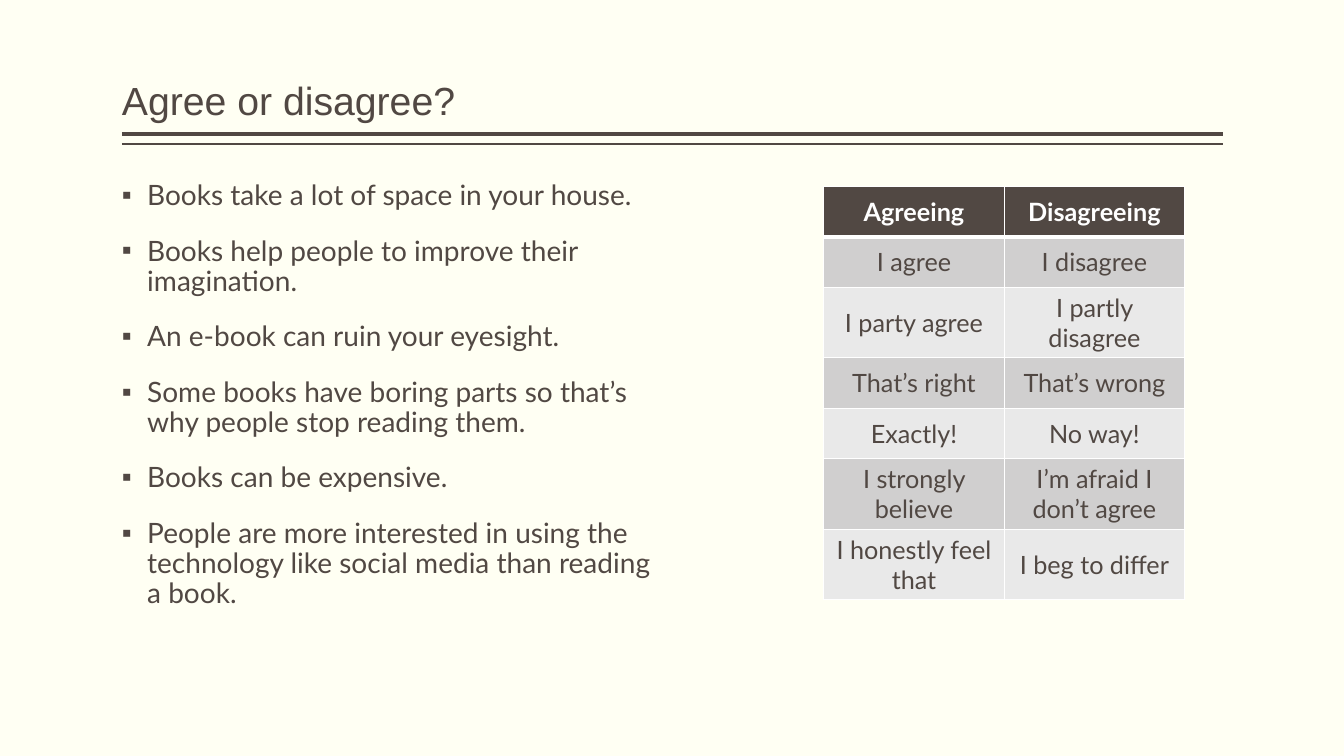
import pptx
import pptx.dml.color
import pptx.enum.text
import pptx.oxml
import pptx.oxml.ns
import pptx.util
from lxml import etree

SLIDE_WIDTH, SLIDE_HEIGHT = 13.33, 7.5
MARGIN = 1.21
CONTENT_WIDTH = SLIDE_WIDTH - 2 * MARGIN + 0.01
COLORS = {
    "background": "FFFFF3",
    "ink": "514843",
    "white": "FFFFFF",
    "odd_row": "D0CFCF",
    "even_row": "E9E9E9",
}
STATEMENTS = [
    "Books take a lot of space in your house.",
    "Books help people to improve their imagination.",
    "An e-book can ruin your eyesight.",
    "Some books have boring parts so that’s why people stop reading them.",
    "Books can be expensive.",
    "People are more interested in using the technology like social media than reading a book.",
]
PHRASES = [
    ("Agreeing", "Disagreeing"),
    ("I agree", "I disagree"),
    ("I party agree", "I partly disagree"),
    ("That’s right", "That’s wrong"),
    ("Exactly!", "No way!"),
    ("I strongly believe", "I’m afraid I don’t agree"),
    ("I honestly feel that", "I beg to differ"),
]


def inches(*lengths):
    return [pptx.util.Inches(length) for length in lengths]


def color(name):
    return pptx.dml.color.RGBColor.from_string(COLORS[name])


def style_font(paragraph, name, size, color_name, bold=False):
    font = paragraph.font
    font.name, font.size, font.bold = name, pptx.util.Pt(size), bold
    font.color.rgb = color(color_name)


def place_placeholder(shape, left, top, width, height, anchor):
    shape.left, shape.top, shape.width, shape.height = inches(left, top, width, height)
    frame = shape.text_frame
    frame.word_wrap = True
    frame.auto_size = pptx.enum.text.MSO_AUTO_SIZE.NONE
    frame.vertical_anchor = anchor
    frame.margin_left = frame.margin_right = 0
    frame.margin_top = frame.margin_bottom = pptx.util.Inches(0.05)
    return frame


def add_rule(slide, top, weight):
    line = slide.shapes.add_connector(
        pptx.enum.shapes.MSO_CONNECTOR.STRAIGHT,
        *inches(MARGIN, top, MARGIN + CONTENT_WIDTH, top))
    line.line.color.rgb = color("ink")
    line.line.width = pptx.util.Pt(weight)
    etree.SubElement(line._element.spPr, pptx.oxml.ns.qn("a:effectLst"))


def add_bullet(paragraph, indent):
    properties = paragraph._p.get_or_add_pPr()
    properties.set("marL", str(pptx.util.Inches(indent)))
    properties.set("indent", str(-pptx.util.Inches(indent)))
    bullet_font = etree.SubElement(properties, pptx.oxml.ns.qn("a:buFont"))
    bullet_font.set("typeface", "Arial")
    bullet = etree.SubElement(properties, pptx.oxml.ns.qn("a:buChar"))
    bullet.set("char", "▪")


def fill_title(shape, text):
    frame = place_placeholder(shape, MARGIN, 0.08, CONTENT_WIDTH, 1.2,
                              pptx.enum.text.MSO_ANCHOR.BOTTOM)
    frame.text = text
    paragraph = frame.paragraphs[0]
    paragraph.alignment = pptx.enum.text.PP_ALIGN.LEFT
    paragraph.line_spacing = 0.9
    style_font(paragraph, "Arial", 28, "ink")


def fill_list(shape, items):
    frame = place_placeholder(shape, MARGIN, 1.75, 5.38, 5,
                              pptx.enum.text.MSO_ANCHOR.TOP)
    frame.text = "\n".join(items)
    for index, paragraph in enumerate(frame.paragraphs):
        add_bullet(paragraph, 0.25)
        paragraph.line_spacing = 0.9
        paragraph.space_before = pptx.util.Pt(18 if index else 0)
        style_font(paragraph, "Lato", 20, "ink")


def add_cell_borders(cell, bottom_weight):
    properties = cell._tc.get_or_add_tcPr()
    weights = {"lnL": 1, "lnR": 1, "lnT": 1, "lnB": bottom_weight}
    for position, (side, weight) in enumerate(weights.items()):
        border = pptx.oxml.parse_xml(
            f'<a:{side} {pptx.oxml.ns.nsdecls("a")} w="{pptx.util.Pt(weight)}">'
            f'<a:solidFill><a:srgbClr val="{COLORS["white"]}"/></a:solidFill></a:{side}>')
        properties.insert(position, border)


def add_phrase_table(slide, rows, left, top, column_width, row_height):
    column_count = len(rows[0])
    table = slide.shapes.add_table(
        len(rows), column_count,
        *inches(left, top, column_width * column_count, row_height * len(rows))).table
    for row_index, row in enumerate(rows):
        is_header = row_index == 0
        fill_name = "ink" if is_header else "odd_row" if row_index % 2 else "even_row"
        for column_index, text in enumerate(row):
            cell = table.cell(row_index, column_index)
            cell.text = text
            cell.vertical_anchor = pptx.enum.text.MSO_ANCHOR.MIDDLE
            cell.fill.solid()
            cell.fill.fore_color.rgb = color(fill_name)
            # The header's lower edge and the first row's upper edge coincide
            add_cell_borders(cell, 3 if is_header else 1)
            paragraph = cell.text_frame.paragraphs[0]
            paragraph.alignment = pptx.enum.text.PP_ALIGN.CENTER
            style_font(paragraph, "Lato", 18, "white" if is_header else "ink", is_header)


def main():
    presentation = pptx.Presentation()
    presentation.slide_width, presentation.slide_height = inches(SLIDE_WIDTH, SLIDE_HEIGHT)
    slide = presentation.slides.add_slide(presentation.slide_layouts[1])
    slide.background.fill.solid()
    slide.background.fill.fore_color.rgb = color("background")

    # Heading with a double rule
    fill_title(slide.shapes.title, "Agree or disagree?")
    add_rule(slide, 1.33, 3)
    add_rule(slide, 1.43, 1)

    # Statements beside the useful phrases
    fill_list(slide.placeholders[1], STATEMENTS)
    add_phrase_table(slide, PHRASES, 8.17, 1.85, 1.79, 0.5)

    presentation.save("out.pptx")


if __name__ == "__main__":
    main()
